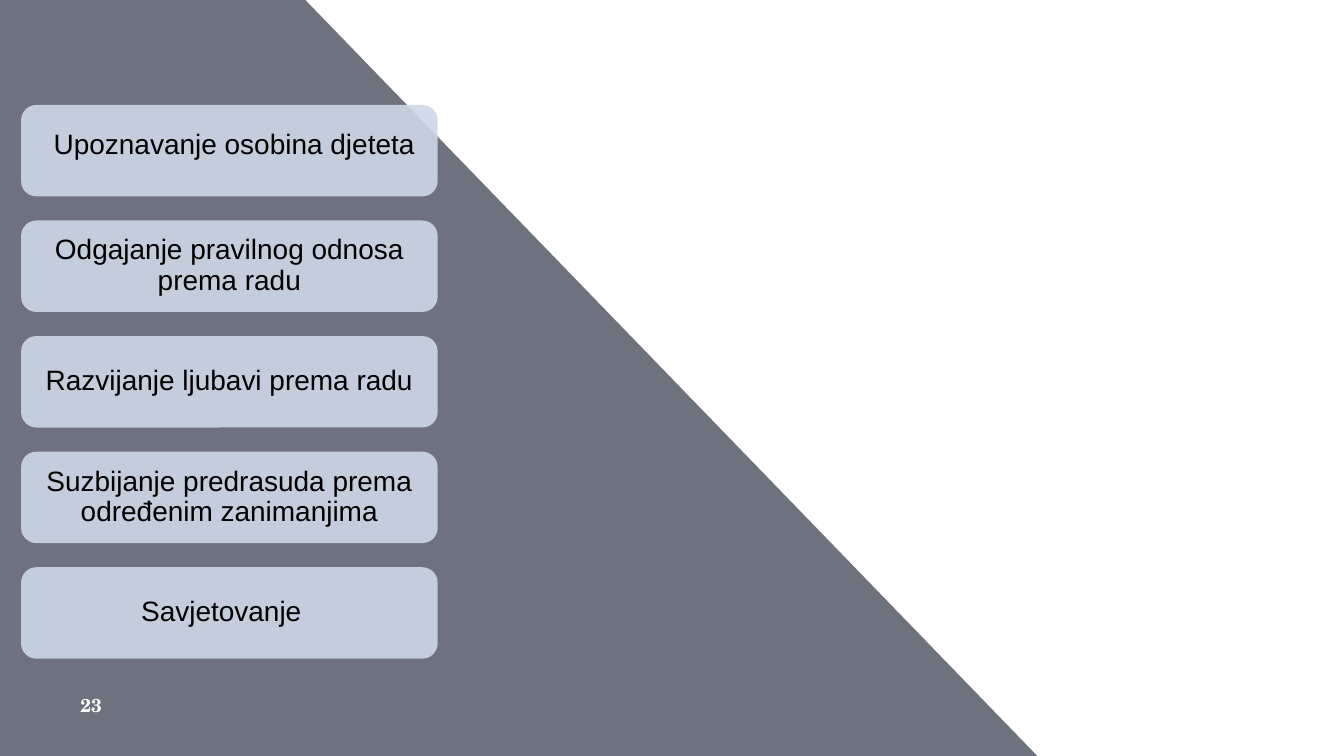
from dataclasses import dataclass

from lxml.etree import SubElement
from pptx import Presentation
from pptx.dml.color import RGBColor
from pptx.enum.shapes import MSO_SHAPE as Shape
from pptx.enum.text import MSO_ANCHOR as Anchor, PP_ALIGN as Align
from pptx.oxml.ns import qn
from pptx.util import Pt

NAVY = RGBColor(0x21, 0x25, 0x39)
PALE_BLUE = RGBColor(0xCE, 0xD8, 0xE7)
BLACK = RGBColor(0, 0, 0)
WHITE = RGBColor(0xFF, 0xFF, 0xFF)

CARD_LEFT, CARD_TOP, CARD_PITCH = 11.3, 56.2, 61.92
CARD_WIDTH, CARD_HEIGHT = 223.2, 49
LABEL_WIDTH, LABEL_HEIGHT = 218.3, 44
LABEL_FONT = {"name": "Arial", "size": Pt(15)}
NUMBER_FONT = {"name": "TeX Gyre Schola", "size": Pt(10), "bold": True}


@dataclass
class Card:
    text: str
    dx: float = 2.4
    dy: float = 2.4
    right_inset: float = 4.5


CARDS = [
    Card("Upoznavanje osobina djeteta", dx=5, dy=0),
    Card("Odgajanje pravilnog odnosa prema radu"),
    Card("Razvijanje ljubavi prema radu"),
    Card("Suzbijanje predrasuda prema određenim zanimanjima"),
    Card("Savjetovanje", right_inset=13),
]


def fill_shape(sp, color: RGBColor, opacity: int) -> None:
    sp.shadow.inherit = False
    sp.line.fill.background()
    sp.fill.solid()
    sp.fill.fore_color.rgb = color
    clr = sp.fill._xPr.find(qn("a:solidFill"))[0]
    SubElement(clr, qn("a:alpha"), val=str(opacity * 1000))


def add_text(shapes, box: tuple, text: str, inset: float, font: dict, color: RGBColor):
    sp = shapes.add_textbox(*map(Pt, box))
    tf = sp.text_frame
    frame = {"word_wrap": True, "vertical_anchor": Anchor.MIDDLE}
    frame |= {f"margin_{side}": Pt(inset) for side in ("left", "top", "right", "bottom")}
    for key, value in frame.items():
        setattr(tf, key, value)
    p = tf.paragraphs[0]
    r = p.add_run()
    r.text = text
    for key, value in font.items():
        setattr(r.font, key, value)
    r.font.color.rgb = color
    return tf


def add_card(s, card: Card, top: float) -> None:
    shapes = s.shapes.add_group_shape().shapes
    sp = shapes.add_shape(Shape.ROUNDED_RECTANGLE, Pt(CARD_LEFT), Pt(top),
                          Pt(CARD_WIDTH), Pt(CARD_HEIGHT))
    fill_shape(sp, PALE_BLUE, 90)
    box = (CARD_LEFT + card.dx, top + card.dy, LABEL_WIDTH, LABEL_HEIGHT)
    tf = add_text(shapes, box, card.text, 4.5, LABEL_FONT, BLACK)
    tf.margin_right = Pt(card.right_inset)
    style = {"alignment": Align.CENTER, "line_spacing": 0.9, "space_after": Pt(5.25)}
    for key, value in style.items():
        setattr(tf.paragraphs[0], key, value)


def add_slanted_panel(s) -> None:
    corners = [(162.9, -0.7), (-0.7, -0.7), (-0.7, 405.5), (556.2, 405.5)]
    start, *rest = [(Pt(x), Pt(y)) for x, y in corners]
    builder = s.shapes.build_freeform(*start)
    builder.add_line_segments(rest, close=True)
    fill_shape(builder.convert_to_shape(), NAVY, 65)


def main() -> None:
    prs = Presentation()
    prs.slide_width, prs.slide_height = Pt(720), Pt(405)
    s = prs.slides.add_slide(prs.slide_layouts[6])
    add_slanted_panel(s)
    add_text(s.shapes, (36, 368, 43, 19.5), "23", 7.2, NUMBER_FONT, WHITE)
    for i, card in enumerate(CARDS):
        add_card(s, card, CARD_TOP + i * CARD_PITCH)
    prs.save("out.pptx")


if __name__ == "__main__":
    main()
